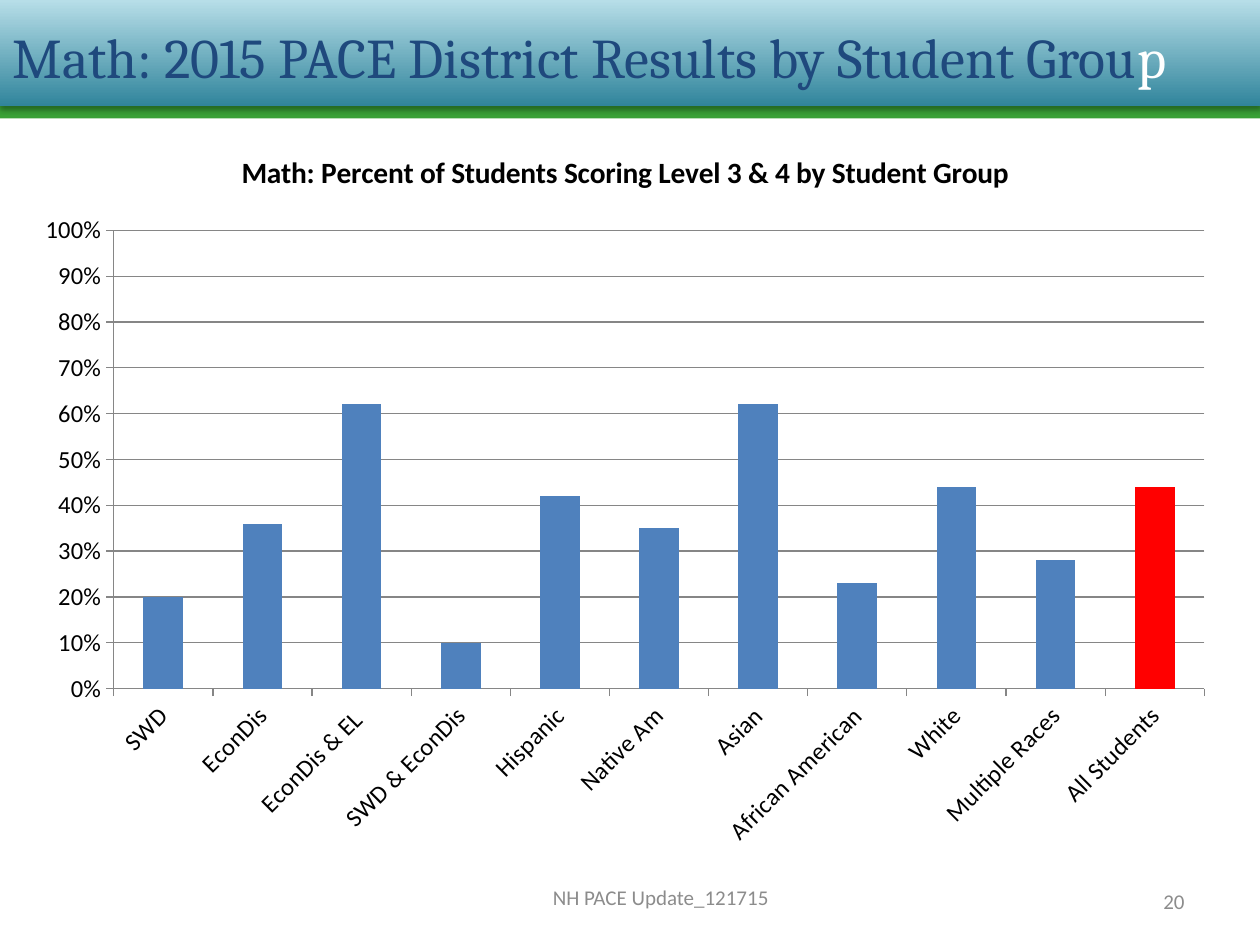
from dataclasses import dataclass

from lxml.etree import SubElement
from pptx import Presentation
from pptx.chart.data import CategoryChartData
from pptx.dml.color import RGBColor
from pptx.enum.chart import XL_CHART_TYPE, XL_TICK_MARK
from pptx.enum.shapes import MSO_SHAPE
from pptx.enum.text import MSO_ANCHOR, PP_ALIGN
from pptx.oxml.ns import qn
from pptx.util import Inches, Pt


@dataclass(frozen=True)
class Theme:
    green: str = "39A036"
    teal: str = "31859C"
    pale: str = "B7DEE8"
    navy: str = "1F497D"
    white: str = "FFFFFF"
    black: str = "000000"
    gray: str = "8C8C8C"
    rule: str = "868686"
    blue: str = "4F81BD"
    red: str = "FF0000"
    head: str = "Cambria"
    body: str = "Calibri"
    title: float = 32
    caption: float = 16.8
    label: float = 14
    small: float = 12


def assign(target, values):
    for name, value in values.items():
        setattr(target, name, value)


def paint(font, face, size, color, bold=False):
    assign(font, {"name": face, "size": Pt(size), "bold": bold})
    font.color.rgb = RGBColor.from_string(color)


class Deck:
    def __init__(self, theme):
        self.theme = theme
        self.show = Presentation()
        assign(self.show, {"slide_width": Inches(10), "slide_height": Inches(7.5)})
        self.slide = self.show.slides.add_slide(self.show.slide_layouts[6])

    def band(self, box, colors, shadow=False):
        shape = self.slide.shapes.add_shape(MSO_SHAPE.RECTANGLE, *map(Inches, box))
        shape.shadow.inherit = False
        shape.line.fill.background()
        if len(colors) == 1:
            shape.fill.solid()
            shape.fill.fore_color.rgb = RGBColor.from_string(colors[0])
        else:
            shape.fill.gradient()
            shape.fill.gradient_angle = 90
            for stop, color in zip(shape.fill.gradient_stops, colors):
                stop.color.rgb = RGBColor.from_string(color)
        if shadow:
            effects = shape.element.spPr.find(qn("a:effectLst"))
            outer = SubElement(effects, qn("a:outerShdw"), blurRad=str(Pt(3.1)),
                               dist=str(Pt(1.8)), dir="5400000", rotWithShape="0")
            color = SubElement(outer, qn("a:srgbClr"), val=self.theme.black)
            SubElement(color, qn("a:alpha"), val="35000")

    def text(self, box, runs, face, size, align=PP_ALIGN.LEFT):
        frame = self.slide.shapes.add_textbox(*map(Inches, box)).text_frame
        assign(frame, {"word_wrap": True, "vertical_anchor": MSO_ANCHOR.MIDDLE})
        para = frame.paragraphs[0]
        para.alignment = align
        for words, color in runs:
            run = para.add_run()
            run.text = words
            paint(run.font, face, size, color)

    def columns(self, box, title, values, accent):
        theme = self.theme
        data = CategoryChartData(number_format="0%")
        data.categories = list(values)
        data.add_series("Series 1", list(values.values()))
        chart = self.slide.shapes.add_chart(
            XL_CHART_TYPE.COLUMN_CLUSTERED, *map(Inches, box), data).chart
        paint(chart.font, theme.body, theme.label, theme.black)
        assign(chart, {"has_legend": False, "has_title": True})
        chart.chart_title.include_in_layout = False
        para = chart.chart_title.text_frame.paragraphs[0]
        run = para.add_run()
        run.text = title
        paint(run.font, theme.body, theme.caption, theme.black, True)

        plot = chart.plots[0]
        assign(plot, {"gap_width": 150, "vary_by_categories": False})
        series = plot.series[0]
        last = series.points[len(values) - 1]
        for part, color in ((series, theme.blue), (last, accent)):
            part.format.fill.solid()
            part.format.fill.fore_color.rgb = RGBColor.from_string(color)

        across, up = chart.category_axis, chart.value_axis
        assign(up, {"minimum_scale": 0, "maximum_scale": 1, "major_unit": 0.1,
                    "has_major_gridlines": True})
        assign(up.tick_labels, {"number_format": "0%", "number_format_is_linked": False})
        for axis in (across, up):
            assign(axis, {"major_tick_mark": XL_TICK_MARK.OUTSIDE,
                          "minor_tick_mark": XL_TICK_MARK.NONE})
            paint(axis.tick_labels.font, theme.body, theme.label, theme.black)
        for item in (across, up, up.major_gridlines):
            item.format.line.width = Pt(0.75)
            item.format.line.color.rgb = RGBColor.from_string(theme.rule)
        for body in chart.element.xpath(".//c:catAx/c:txPr/a:bodyPr"):
            body.set("rot", "-2700000")


def main():
    theme = Theme()
    deck = Deck(theme)
    deck.band((0, 0.74, 10, 0.2), [theme.green])
    deck.band((0, 0, 10, 0.84), [theme.teal, theme.pale], shadow=True)
    deck.text((0, 0.14, 9.92, 0.61),
              [("Math: 2015 PACE District Results by Student Grou", theme.navy),
               ("p", theme.white)], theme.head, theme.title)
    deck.text((8.33, 6.95, 1.17, 0.4), [("20", theme.gray)],
              theme.body, theme.small, PP_ALIGN.RIGHT)
    deck.text((2.33, 6.92, 5.83, 0.4), [("NH PACE Update_121715", theme.gray)],
              theme.body, theme.small, PP_ALIGN.CENTER)
    groups = {
        "SWD": 0.2, "EconDis": 0.36, "EconDis & EL ": 0.62, "SWD & EconDis": 0.1,
        "Hispanic": 0.42, "Native Am": 0.35, "Asian": 0.62, "African American": 0.23,
        "White": 0.44, "Multiple Races": 0.28, "All Students": 0.44,
    }
    deck.columns((0.17, 1, 9.58, 5.83),
                 "Math: Percent of Students Scoring Level 3 & 4 by Student Group",
                 groups, theme.red)
    deck.show.save("out.pptx")


if __name__ == "__main__":
    main()
